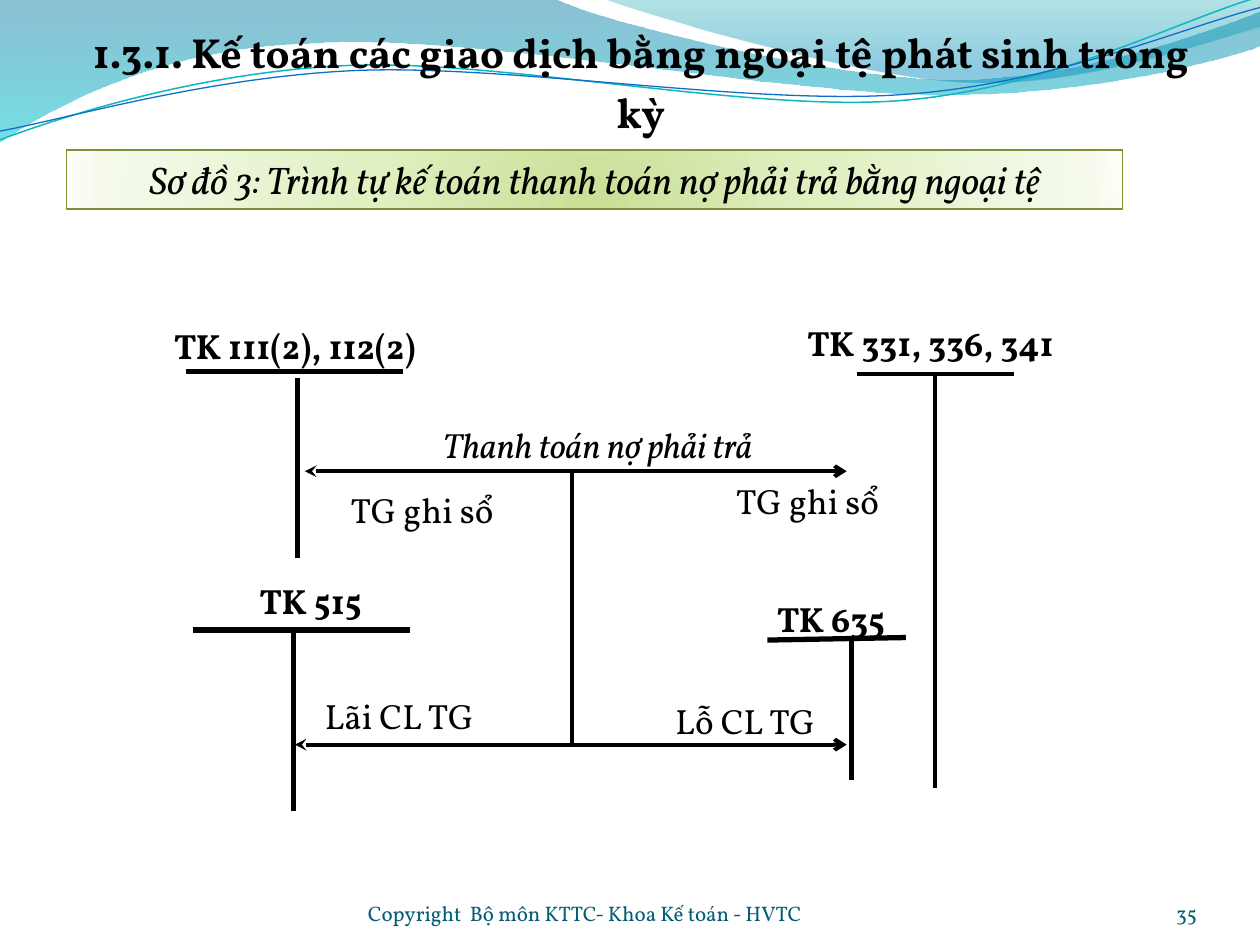
from dataclasses import dataclass

from lxml.etree import SubElement
from pptx import Presentation
from pptx.dml.color import RGBColor
from pptx.enum.shapes import MSO_CONNECTOR, MSO_SHAPE
from pptx.enum.text import MSO_ANCHOR, PP_ALIGN
from pptx.oxml.ns import qn
from pptx.util import Inches, Pt


@dataclass(frozen=True)
class Theme:
    font: str = "Vollkorn"
    ink: str = "000000"
    footer: str = "045D75"
    border: str = "7B9135"
    title_size: int = 24
    banner_size: int = 22
    label_size: int = 20
    footer_size: int = 12
    thick: float = 3
    medium: float = 2.25
    thin: float = 0.75
    banner_stops: tuple = ((0, "C9DF97", 100), (43, "E0F0C1", 100),
                           (93, "F5FAEC", 100), (100, "FCFEF8", 100))
    wide_stops: tuple = ((0, "0074A1", 45), (100, "00C6CF", 55))
    corner_stops: tuple = ((0, "00A1A9", 30), (80, "008BBF", 45))
    teal_line: str = "0AB8BF"
    blue_line: str = "0F6FC6"


THEME = Theme()
COLUMNS, ROWS = 100, 75

FILLED_WAVES = [
    (THEME.wide_stops, [
        (0, 0), (44, -0.1),
        (47.6, 1.7, 66.4, 6.3, 75.8, 6.3), (85.3, 6.3, 95.8, 2.6, 100, 0.9),
        (100.1, 3.6),
        (98.3, 4.4, 87, 7.6, 74.6, 7.5), (62.2, 7.5, 38.2, 2.8, 25.7, 3.4),
        (12.9, 3.6, 4.6, 8.3, -0.1, 11.3)]),
    (THEME.corner_stops, [
        (47.9, -0.1),
        (50.9, 1.1, 68.2, 6.2, 76.9, 6.5), (85.6, 6.9, 96.1, 3.2, 100, 2.1),
        (100, 0)]),
]
LINE_WAVES = [
    (THEME.teal_line, 0.85, [
        (0, 11.1), (4.8, 9.3, 15.8, 5.7, 27.7, 5.2),
        (39.5, 4.7, 59.3, 8.9, 71.3, 8), (83.3, 7.1, 93.8, 1.5, 99.8, -0.2)]),
    (THEME.blue_line, THEME.thin, [
        (0, 10.4), (4.7, 9.6, 16.4, 6.1, 28.3, 5.6),
        (40.3, 5.1, 59.7, 8.4, 71.7, 7.5), (83.6, 6.7, 94.1, 2.1, 100, 0.6)]),
]

TITLE = "1.3.1. Kế toán các giao dịch bằng ngoại tệ phát sinh trong kỳ"
BANNER = "Sơ đồ 3: Trình tự kế toán thanh toán nợ phải trả bằng ngoại tệ"
FOOTERS = [
    ("Copyright  Bộ môn KTTC- Khoa Kế toán - HVTC", 29.2, 36.7, PP_ALIGN.LEFT),
    ("35", 86.7, 8.3, PP_ALIGN.RIGHT),
]
ACCOUNTS = [
    {"name": "TK 111(2), 112(2)", "label": (6.7, 25.3, 33.4), "width": THEME.thick,
     "bar": (14.8, 29.5, 32, 29.5), "stem": (23.6, 30, 44.3)},
    {"name": "TK 331, 336, 341", "label": (50.8, 25, 46.1), "width": THEME.medium,
     "bar": (68, 29.7, 80.5, 29.7), "stem": (74.2, 29.7, 62.5)},
    {"name": "TK 515", "label": (11.7, 45.5, 25.9), "width": THEME.thick,
     "bar": (15.3, 50, 32.5, 50), "stem": (23.3, 50.1, 64.4)},
    {"name": "TK 635", "label": (52.3, 46.9, 27.3), "width": THEME.thick,
     "bar": (60.9, 50.8, 71.9, 50.6), "stem": (67.6, 50.8, 61.9)},
]
ENTRIES = [(24.2, 37.4, 67.2, 37.4), (23.4, 59.1, 67.2, 59.1)]
DIVIDER = (45.4, 37.3, 45.4, 59.1)
NOTES = [
    ("Thanh toán nợ phải trả", 24.8, 33.1, 45.3, True),
    ("TG ghi sổ", 22.6, 38.3, 21.8, False),
    ("TG ghi sổ", 55.9, 37.6, 16.4, False),
    ("Lãi CL TG", 23.5, 54.6, 16.4, False),
    ("Lỗ CL TG", 50.4, 55, 17.5, False),
]
LABEL_ROWS = 4.4

deck = Presentation()
deck.slide_width, deck.slide_height = Inches(10), Inches(7.5)
page = deck.slides.add_slide(deck.slide_layouts[6])


def across(columns):
    return round(deck.slide_width * columns / COLUMNS)


def down(rows):
    return round(deck.slide_height * rows / ROWS)


def place(left, top, width, height):
    return across(left), down(top), across(width), down(height)


def add_color(parent, color, opacity):
    node = SubElement(parent, qn("a:srgbClr"), val=color)
    if opacity < 100:
        SubElement(node, qn("a:alpha"), val=str(opacity * 1000))


def set_gradient(shape, stops, radial=False):
    shape.fill.gradient()
    gradient = shape._element.spPr.find(qn("a:gradFill"))
    for child in list(gradient):
        gradient.remove(child)
    stop_list = SubElement(gradient, qn("a:gsLst"))
    for position, color, opacity in stops:
        stop = SubElement(stop_list, qn("a:gs"), pos=str(position * 1000))
        add_color(stop, color, opacity)
    if radial:
        focus = SubElement(gradient, qn("a:path"))
        focus.set("path", "circle")
        SubElement(focus, qn("a:fillToRect"), l="50000", t="130000", r="50000", b="-30000")
    else:
        SubElement(gradient, qn("a:lin"), ang="5400000", scaled="1")


def add_wave(segments, closed):
    points = [(across(x), down(y)) for segment in segments
              for x, y in zip(segment[::2], segment[1::2])]
    builder = page.shapes.build_freeform(*points[0])
    builder.add_line_segments(points[1:], close=closed)
    wave = builder.convert_to_shape()
    wave.shadow.inherit = False
    steps = wave._element.spPr.iter(qn("a:lnTo"))
    corners = list(steps)
    for segment in segments[1:]:
        count = len(segment) // 2
        used, corners = corners[:count], corners[count:]
        if count == 3:
            used[0].tag = qn("a:cubicBezTo")
            for control in used[1:]:
                used[0].append(control[0])
                control.getparent().remove(control)
    return wave


def write(box, text, size, color=THEME.ink, align=PP_ALIGN.CENTER, bold=False, italic=False):
    box.text_frame.word_wrap = True
    para = box.text_frame.paragraphs[0]
    para.text = text
    para.alignment = align
    span = para.runs[0].font
    span.name, span.size, span.bold, span.italic = THEME.font, Pt(size), bold, italic
    span.color.rgb = RGBColor.from_string(color)
    return para


def set_line(shape, color, width):
    shape.line.color.rgb = RGBColor.from_string(color)
    shape.line.width = Pt(width)


def add_line(ends, width, arrows=False):
    x1, y1, x2, y2 = ends
    line = page.shapes.add_connector(MSO_CONNECTOR.STRAIGHT, across(x1), down(y1), across(x2), down(y2))
    set_line(line, THEME.ink, width)
    properties = line._element.spPr
    if arrows:
        outline = properties.find(qn("a:ln"))
        SubElement(outline, qn("a:headEnd"), type="stealth")
        SubElement(outline, qn("a:tailEnd"), type="arrow")
    SubElement(properties, qn("a:effectLst"))


def add_label(text, left, top, width, **style):
    box = page.shapes.add_textbox(*place(left, top, width, LABEL_ROWS))
    write(box, text, THEME.label_size, **style)


for stops, segments in FILLED_WAVES:
    wave = add_wave(segments, True)
    set_gradient(wave, stops)
    wave.line.fill.background()
for color, width, segments in LINE_WAVES:
    wave = add_wave(segments, False)
    wave.fill.background()
    set_line(wave, color, width)

for text, left, width, align in FOOTERS:
    box = page.shapes.add_textbox(*place(left, 69.5, width, 4))
    frame = box.text_frame
    frame.margin_left = frame.margin_top = frame.margin_right = frame.margin_bottom = 0
    frame.vertical_anchor = MSO_ANCHOR.BOTTOM
    write(box, text, THEME.footer_size, THEME.footer, align)

banner = page.shapes.add_shape(MSO_SHAPE.RECTANGLE, *place(5.3, 11.9, 83.8, 4.7))
banner.shadow.inherit = False
set_gradient(banner, THEME.banner_stops, radial=True)
set_line(banner, THEME.border, THEME.thin)
write(banner, BANNER, THEME.banner_size, italic=True)

for account in ACCOUNTS:
    add_label(account["name"], *account["label"], bold=True)
    add_line(account["bar"], account["width"])
    column, top, bottom = account["stem"]
    add_line((column, top, column, bottom), account["width"])
add_line(DIVIDER, THEME.medium)
for entry in ENTRIES:
    add_line(entry, THEME.medium, arrows=True)
for text, left, top, width, italic in NOTES:
    add_label(text, left, top, width, italic=italic)

title = page.shapes.add_textbox(*place(4.2, 0.8, 93.3, 5.5))
write(title, TITLE, THEME.title_size, bold=True).line_spacing = 1.2

deck.save("out.pptx")
